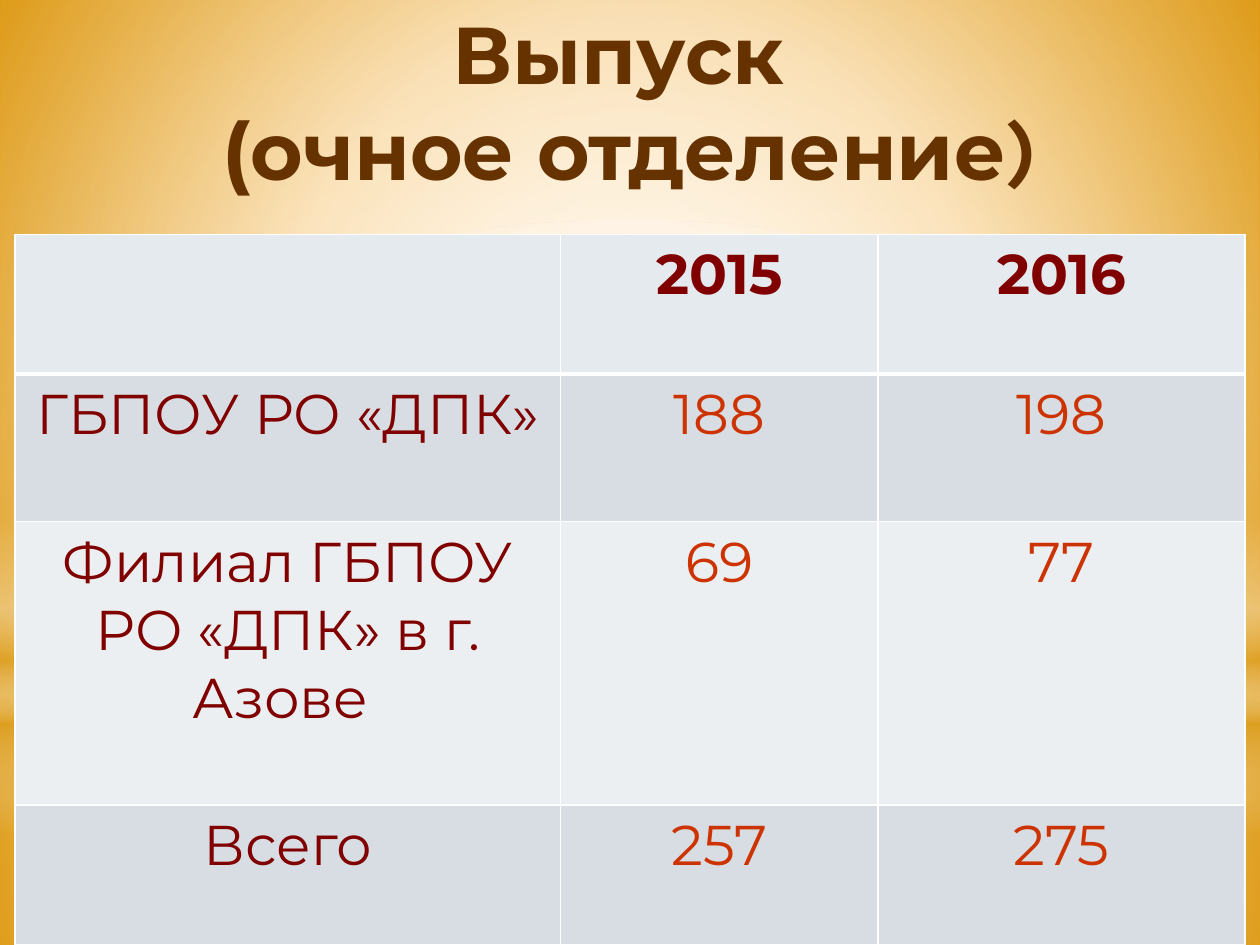
from lxml import etree
from pptx import Presentation
from pptx import util as u
from pptx.dml.color import RGBColor
from pptx.enum import shapes, text
from pptx.oxml.ns import qn

WIDTH, HEIGHT = 10, 7.5
FONT = "Montserrat"
COLOURS = {
    "title": "663300", "label": "800000", "number": "CC3300",
    "header": "E5EAEF", "odd": "D8DDE3", "even": "ECEFF1",
    "white": "FFFFFF", "gold": "DC9E1F",
    "cream": "FFF4E3", "peach": "FFCC7E", "orange": "E79200",
}
CENTRE = (50, 50, 50, 50)
COLUMNS = (4.33, 2.52, 2.91)
ROWS = (1.11, 1.17, 2.25, 1.11)
GRADUATES = (
    ("", "2015", "2016"),
    ("ГБПОУ РО «ДПК»", "188", "198"),
    ("Филиал ГБПОУ РО «ДПК» в г. Азове ", "69", "77"),
    ("Всего", "257", "275"),
)


def colour(name):
    return RGBColor.from_string(COLOURS[name])


def add_node(parent, tag, **attributes):
    node = etree.SubElement(parent, qn(tag))
    for key, value in attributes.items():
        node.set(key, str(value))
    return node


def set_gradient(fill, owner, stops, focus=None):
    """Stops are (percent, colour, opacity); without a focus the gradient runs downwards."""
    fill.gradient()
    gradient = next(owner.iter(qn("a:gradFill")))
    for child in list(gradient):
        gradient.remove(child)
    stop_list = add_node(gradient, "a:gsLst")
    for position, name, opacity in stops:
        stop = add_node(stop_list, "a:gs", pos=position * 1000)
        tint = add_node(stop, "a:srgbClr", val=COLOURS[name])
        if opacity < 100:
            add_node(tint, "a:alpha", val=opacity * 1000)
    if focus:
        circle = add_node(gradient, "a:path", path="circle")
        edges = {side: share * 1000 for side, share in zip("ltrb", focus)}
        add_node(circle, "a:fillToRect", **edges)
    else:
        add_node(gradient, "a:lin", ang=90 * 60000, scaled=0)


def add_glow(slide, kind, top, height, stops, focus=CENTRE):
    shape = slide.shapes.add_shape(
        kind, 0, u.Inches(top), u.Inches(WIDTH), u.Inches(height))
    shape.shadow.inherit = False
    shape.line.fill.background()
    set_gradient(shape.fill, shape.element, stops, focus)


def add_backdrop(slide):
    set_gradient(slide.background.fill, slide.element,
                 [(0, "cream", 100), (42, "peach", 100), (100, "orange", 100)],
                 (24, 44, 24, 12))
    rectangle = shapes.MSO_SHAPE.RECTANGLE
    horizon = 5.58
    add_glow(slide, rectangle, horizon, HEIGHT - horizon,
             [(0, "white", 91), (37, "white", 76), (100, "gold", 79)])
    add_glow(slide, rectangle, 0, horizon,
             [(0, "white", 89), (48, "white", 62), (100, "gold", 79)])
    add_glow(slide, rectangle, 4.12, 2.5,
             [(0, "white", 0), (29, "white", 30), (45, "gold", 40),
              (55, "white", 26), (65, "gold", 60), (100, "white", 0)], None)
    add_glow(slide, shapes.MSO_SHAPE.OVAL, 1.75, horizon,
             [(0, "white", 100), (56, "white", 0)])


def format_paragraph(paragraph, size, name, bold):
    paragraph.alignment = text.PP_ALIGN.CENTER
    paragraph.font.name = FONT
    paragraph.font.size = u.Pt(size)
    paragraph.font.bold = bold
    paragraph.font.color.rgb = colour(name)


def fill_title(slide):
    title = slide.shapes.title
    title.left, title.top = 0, u.Inches(-0.02)
    title.width, title.height = u.Inches(WIDTH), u.Inches(1.8)
    frame = title.text_frame
    frame.auto_size = text.MSO_AUTO_SIZE.NONE
    frame.vertical_anchor = text.MSO_ANCHOR.TOP
    paragraph = frame.paragraphs[0]
    paragraph.line_spacing = 1.0
    paragraph.space_before = u.Pt(0)
    format_paragraph(paragraph, 46, "title", True)
    paragraph.add_run().text = "Выпуск "
    paragraph.add_line_break()
    paragraph.add_run().text = "(очное отделение"
    bracket = paragraph.add_run()
    bracket.text = ")"
    bracket.font.name = "Karla"


def set_borders(cell, top, bottom):
    properties = cell._tc.get_or_add_tcPr()
    for side, points in (("L", 1), ("R", 1), ("T", top), ("B", bottom)):
        line = add_node(properties, f"a:ln{side}", w=u.Pt(points))
        add_node(add_node(line, "a:solidFill"), "a:srgbClr", val=COLOURS["white"])


def format_cell(cell, value, row, column):
    cell.margin_left = cell.margin_right = u.Inches(0.08)
    cell.margin_top = cell.margin_bottom = u.Inches(0.05)
    set_borders(cell, 3 if row == 1 else 1, 3 if row == 0 else 1)
    band = "header" if row == 0 else "odd" if row % 2 else "even"
    cell.fill.solid()
    cell.fill.fore_color.rgb = colour(band)
    cell.text = value
    name = "number" if row and column else "label"
    format_paragraph(cell.text_frame.paragraphs[0], 32, name, row == 0)


def add_graduates_table(slide):
    table = slide.shapes.add_table(
        len(ROWS), len(COLUMNS), u.Inches(0.12), u.Inches(1.86),
        u.Inches(sum(COLUMNS)), u.Inches(sum(ROWS))).table
    for column, width in zip(table.columns, COLUMNS):
        column.width = u.Inches(width)
    for row, height in zip(table.rows, ROWS):
        row.height = u.Inches(height)
    for row, values in enumerate(GRADUATES):
        for column, value in enumerate(values):
            format_cell(table.cell(row, column), value, row, column)


def main():
    presentation = Presentation()
    presentation.slide_width = u.Inches(WIDTH)
    presentation.slide_height = u.Inches(HEIGHT)
    slide = presentation.slides.add_slide(presentation.slide_layouts.get_by_name("Title Only"))
    add_backdrop(slide)
    fill_title(slide)
    # The title belongs in front of the backdrop
    slide.shapes.element.append(slide.shapes.title.element)
    add_graduates_table(slide)
    presentation.save("out.pptx")


if __name__ == "__main__":
    main()
